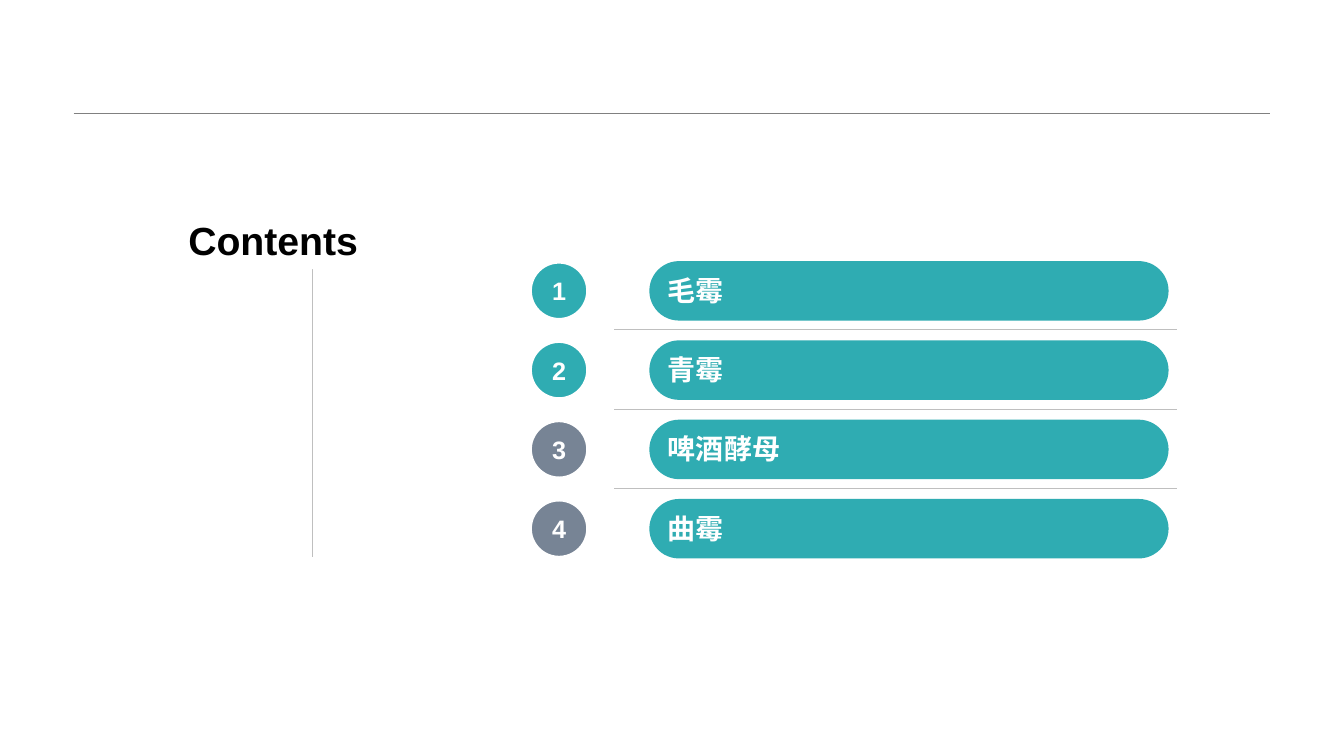
from dataclasses import dataclass

from pptx import Presentation
from pptx.dml.color import RGBColor
from pptx.enum.shapes import MSO_CONNECTOR, MSO_SHAPE
from pptx.enum.text import MSO_ANCHOR, PP_ALIGN
from pptx.oxml.ns import qn
from pptx.util import Inches, Pt
from lxml.etree import SubElement


@dataclass(frozen=True)
class Theme:
    font: str = "Arial"
    teal: str = "2FACB2"
    slate: str = "778495"
    white: str = "FFFFFF"
    black: str = "000000"
    header_rule: str = "808080"
    divider: str = "BFBFBF"
    title_size: int = 28
    topic_size: int = 20
    number_size: int = 18
    hairline: float = 0.25
    badge_outline: float = 2.25


THEME = Theme()
TOPICS = [
    ("毛霉", THEME.teal),
    ("青霉", THEME.teal),
    ("啤酒酵母", THEME.slate),
    ("曲霉", THEME.slate),
]


def write_text(shape, text, size, color=THEME.white, align=PP_ALIGN.LEFT,
               anchor=MSO_ANCHOR.MIDDLE):
    frame = shape.text_frame
    frame.word_wrap = True
    frame.vertical_anchor = anchor
    paragraph = frame.paragraphs[0]
    paragraph.alignment = align
    run = paragraph.add_run()
    run.text = text
    run.font.name = THEME.font
    run.font.size = Pt(size)
    run.font.bold = True
    run.font.color.rgb = RGBColor.from_string(color)


def add_rule(slide, x1, y1, x2, y2, color):
    rule = slide.shapes.add_connector(
        MSO_CONNECTOR.STRAIGHT, Inches(x1), Inches(y1), Inches(x2), Inches(y2))
    rule.line.color.rgb = RGBColor.from_string(color)
    rule.line.width = Pt(THEME.hairline)
    SubElement(rule._element.spPr, qn("a:effectLst"))


def add_filled(slide, preset, left, top, width, height, fill):
    shape = slide.shapes.add_shape(
        preset, Inches(left), Inches(top), Inches(width), Inches(height))
    shape.shadow.inherit = False
    shape.fill.solid()
    shape.fill.fore_color.rgb = RGBColor.from_string(fill)
    shape.line.fill.background()
    return shape


def add_heading(slide, left, top, width, height):
    # Vertical rule, partly covered by the title
    rule_x = left + 1.36
    add_rule(slide, rule_x, top + 0.05, rule_x, top + 3.43, THEME.divider)

    title = slide.shapes.title
    title.left, title.top = Inches(left), Inches(top)
    title.width, title.height = Inches(width), Inches(height)
    title.fill.solid()
    title.fill.fore_color.rgb = RGBColor.from_string(THEME.white)
    write_text(title, "Contents", THEME.title_size, color=THEME.black,
               align=PP_ALIGN.RIGHT, anchor=MSO_ANCHOR.TOP)
    # Bring the title in front of the rule
    slide.shapes._spTree.append(title._element)


def add_topic_list(slide, left, top, width, height):
    badge_size, bar_height, bar_indent = 0.57, 0.59, 1.18
    pitch = (height - bar_height) / (len(TOPICS) - 1)
    for index, (topic, badge_color) in enumerate(TOPICS):
        row_top = top + index * pitch

        # Number badge
        badge = add_filled(slide, MSO_SHAPE.OVAL, left, row_top + 0.01,
                           badge_size, badge_size, badge_color)
        badge.line.color.rgb = RGBColor.from_string(THEME.white)
        badge.line.width = Pt(THEME.badge_outline)
        write_text(badge, str(index + 1), THEME.number_size,
                   align=PP_ALIGN.CENTER)

        # Topic bar
        bar = add_filled(slide, MSO_SHAPE.ROUNDED_RECTANGLE, left + bar_indent,
                         row_top, width - bar_indent, bar_height, THEME.teal)
        bar.adjustments[0] = 0.5
        write_text(bar, topic, THEME.topic_size, anchor=MSO_ANCHOR.BOTTOM)

        # Divider between rows
        if index < len(TOPICS) - 1:
            divider_y = row_top + 0.68
            add_rule(slide, left + 0.83, divider_y, left + width + 0.08,
                     divider_y, THEME.divider)


def main():
    deck = Presentation()
    deck.slide_width, deck.slide_height = Inches(13.33), Inches(7.5)
    title_only = deck.slide_layouts[5]
    slide = deck.slides.add_slide(title_only)

    add_rule(slide, 0.73, 1.12, 12.6, 1.12, THEME.header_rule)
    add_heading(slide, 1.74, 2.1, 1.91, 0.57)
    add_topic_list(slide, 5.26, 2.59, 6.33, 2.95)
    deck.save("out.pptx")


if __name__ == "__main__":
    main()
